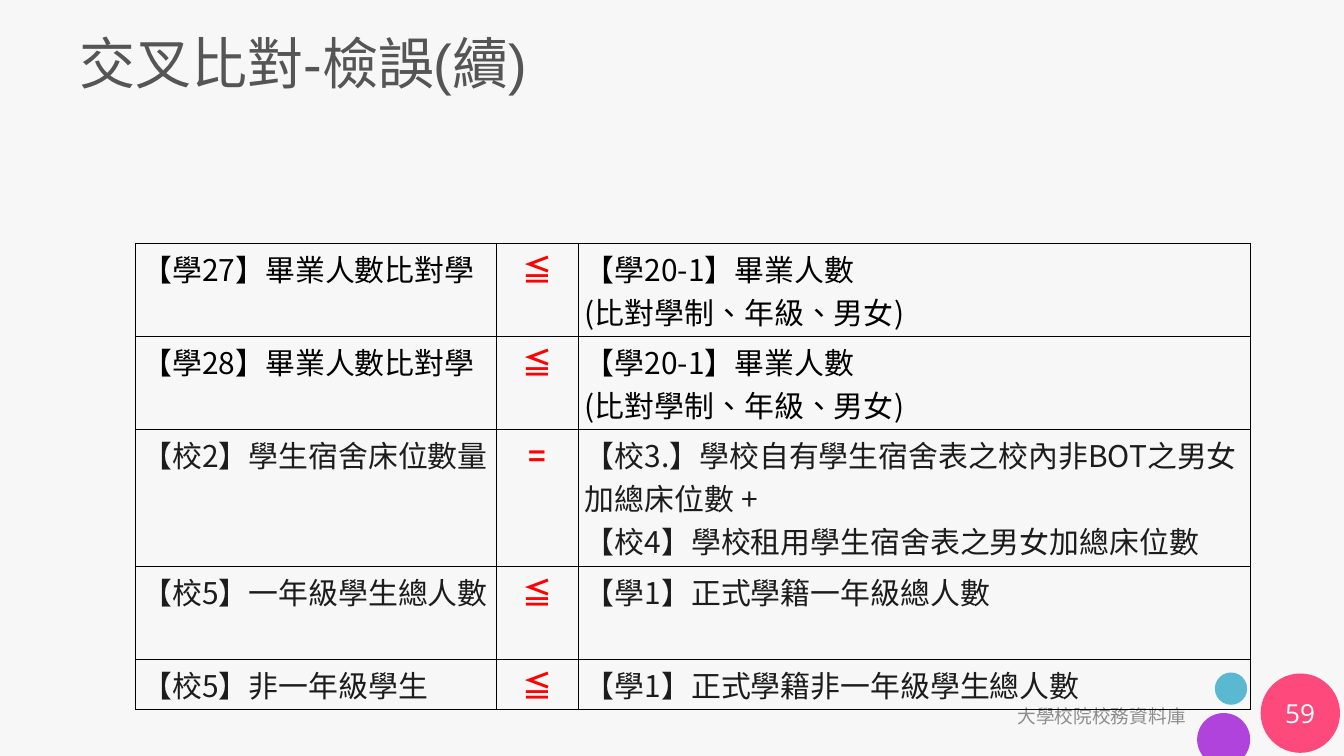
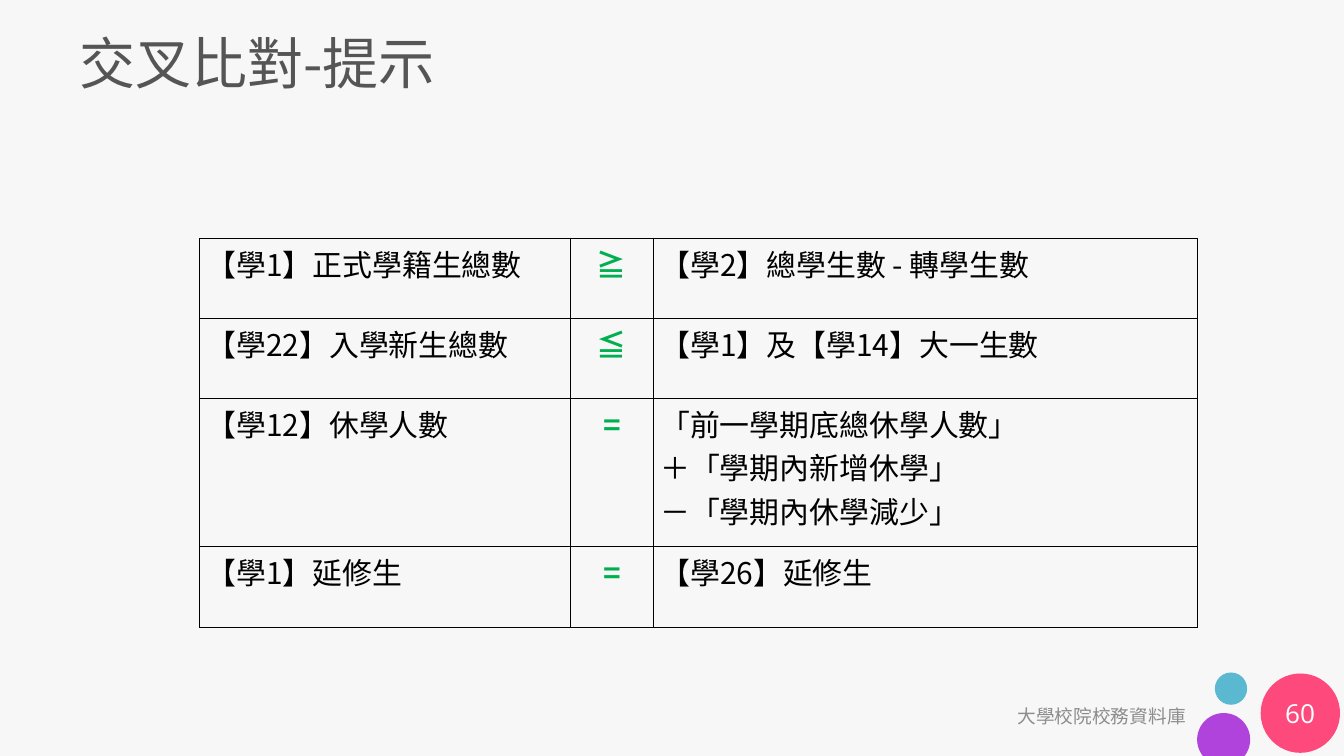
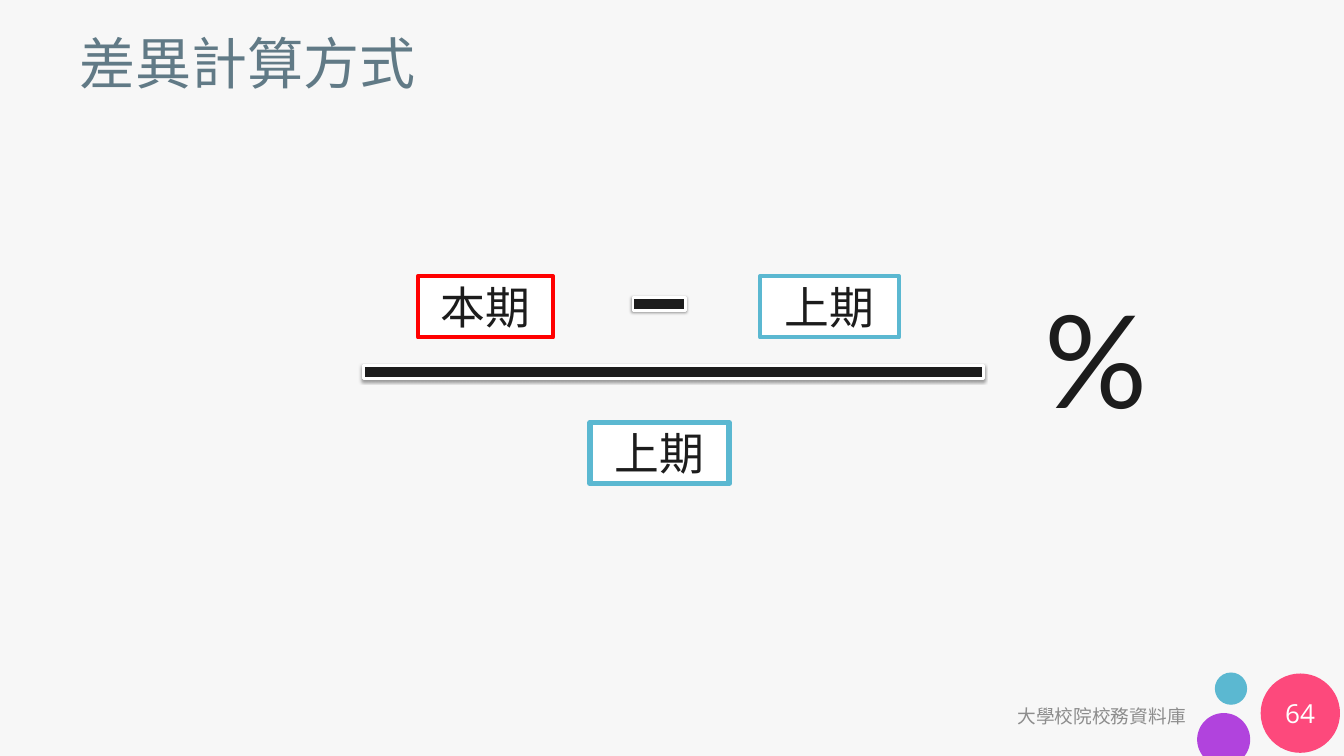
import math

import lxml.etree
import pptx
import pptx.util
import pptx.dml.color
import pptx.enum.shapes
import pptx.enum.text
import pptx.oxml
import pptx.oxml.ns

Pt = pptx.util.Pt
SHAPE = pptx.enum.shapes.MSO_SHAPE
ALIGN = pptx.enum.text.PP_ALIGN
MIDDLE = pptx.enum.text.MSO_ANCHOR.MIDDLE
TOP = pptx.enum.text.MSO_ANCHOR.TOP
GROW = pptx.enum.text.MSO_AUTO_SIZE.SHAPE_TO_FIT_TEXT

CJK = "Noto Sans CJK SC"
BLACK, INK, WHITE = "000000", "1C1C1C", "FFFFFF"
RED, GREEN, BLUE, PINK, PURPLE = "FF0000", "00B050", "5BB8D1", "FD497C", "B143DD"
FOOTER = "大學校院校務資料庫"
INSETS = (13, 6.5)

TABLES = [
    {
        "title": ("交叉比對-檢誤(續)", "Arial", "555555"), "page": "59", "sign": RED,
        "at": (145.4, 260.3), "cols": (386.6, 87.5, 720.3),
        "heights": (99.8, 99.8, 146.6, 99.8, 53.4),
        "rows": [
            (BLACK, "【學27】畢業人數比對學", "≦", "【學20-1】畢業人數\n(比對學制、年級、男女)"),
            (BLACK, "【學28】畢業人數比對學", "≦", "【學20-1】畢業人數\n(比對學制、年級、男女)"),
            (INK, "【校2】學生宿舍床位數量", "=",
             "【校3.】學校自有學生宿舍表之校內非BOT之男女加總床位數 +\n"
             "【校4】學校租用學生宿舍表之男女加總床位數"),
            (INK, "【校5】一年級學生總人數", "≦", "【學1】正式學籍一年級總人數"),
            (INK, "【校5】非一年級學生", "≦", "【學1】正式學籍非一年級學生總人數"),
        ],
    },
    {
        "title": ("交叉比對-提示", CJK, "555555"), "page": "60", "sign": GREEN,
        "at": (213.8, 255.2), "cols": (397.2, 89.2, 582.8),
        "heights": (85.8, 85.8, 159.2, 85.8),
        "rows": [
            (BLACK, "【學1】正式學籍生總數", "≧", "【學2】總學生數 - 轉學生數"),
            (BLACK, "【學22】入學新生總數", "≦", "【學1】及【學14】大一生數"),
            (BLACK, "【學12】休學人數", "=",
             "「前一學期底總休學人數」\n＋「學期內新增休學」\n－「學期內休學減少」"),
            (BLACK, "【學1】延修生", "=", "【學26】延修生"),
        ],
    },
]

FORMULA_TITLE = ("差異計算方式", CJK, "617A86")
FORMULA_PAGE = "64"
TERMS = [
    ("本期", (447.8, 295.9, 144.7, 65.5), RED, 4.5),
    ("上期", (814.3, 295.9, 149, 65.5), BLUE, 4.5),
    ("上期", (632.2, 452.7, 149, 65.5), BLUE, 6),
]
BARS = [(668.2, 295.9, 76.3, 59), (269.3, 369.4, 904.3, 59)]


def rgb(code):
    """Return the colour for a hex string."""
    return pptx.dml.color.RGBColor.from_string(code)


def points(values):
    """Convert numbers to lengths in points."""
    return [Pt(v) for v in values]


def write(tf, text, size, font, color, align=None, bold=False):
    """Set the text of a frame and format every run."""
    tf.text = text
    for p in tf.paragraphs:
        p.alignment = align
        for r in p.runs:
            r.font.size, r.font.name, r.font.bold = Pt(size), font, bold
            r.font.color.rgb = rgb(color)
            rPr = r.font._element
            rPr.set("lang", "zh-TW")
            lxml.etree.SubElement(rPr, pptx.oxml.ns.qn("a:ea")).set("typeface", CJK)


def frame(tf, anchor, insets=None):
    """Make a text frame wrap, with its anchor and insets."""
    tf.word_wrap = True
    tf.vertical_anchor = anchor
    if insets:
        tf.margin_left = tf.margin_right = Pt(insets[0])
        tf.margin_top = tf.margin_bottom = Pt(insets[1])


def add_text(s, box, anchor, *style, insets=None):
    """Add a text box."""
    tf = s.shapes.add_textbox(*points(box)).text_frame
    frame(tf, anchor, insets)
    write(tf, *style)
    return tf


def paint(sp, fill, line=None, width=0):
    """Give a shape a flat fill and an optional outline."""
    sp.shadow.inherit = False
    sp.fill.solid()
    sp.fill.fore_color.rgb = rgb(fill)
    if line:
        sp.line.color.rgb = rgb(line)
        sp.line.width = Pt(width)
    else:
        sp.line.fill.background()
    return sp


def add_shape(s, kind, box, *look):
    """Add a painted preset shape."""
    return paint(s.shapes.add_shape(kind, *points(box)), *look)


def add_cut_circle(s, cx, cy, radius, bottom, color):
    """Add a circle cut off flat at the bottom."""
    dip = math.asin((bottom - cy) / radius)
    start, sweep, steps = math.pi - dip, math.pi + 2 * dip, 60
    angles = [start + sweep * i / steps for i in range(steps + 1)]
    outline = [(Pt(cx + radius * math.cos(a)), Pt(cy + radius * math.sin(a))) for a in angles]
    builder = s.shapes.build_freeform(*outline[0])
    builder.add_line_segments(outline[1:])
    paint(builder.convert_to_shape(), color)


def add_slide(prs, title, page):
    """Add a slide with circles, title, footer and page number."""
    s = prs.slides.add_slide(prs.slide_layouts[5])
    add_shape(s, SHAPE.OVAL, (1301.6, 720.5, 34.6, 34.6), BLUE)
    add_shape(s, SHAPE.OVAL, (1350.7, 721.6, 85, 85), PINK)
    add_cut_circle(s, 1311.1, 792.4, 28.4, 810, PURPLE)
    sp = s.shapes.title
    sp.left, sp.top, sp.width, sp.height = points((72, 19.4, 1299.6, 95))
    frame(sp.text_frame, MIDDLE, INSETS)
    text, font, color = title
    write(sp.text_frame, text, 60, font, color, ALIGN.LEFT)
    add_text(s, (827.7, 745.2, 455.8, 43.2), MIDDLE,
             FOOTER, 20, "Arial", "8D8D8D", ALIGN.RIGHT, insets=INSETS)
    add_text(s, (1350.5, 742.6, 85, 43.2), MIDDLE,
             page, 28, "Open Sans", WHITE, ALIGN.CENTER, insets=INSETS)
    return s


def add_borders(cell):
    """Draw thin black lines around a cell."""
    tcPr = cell._tc.get_or_add_tcPr()
    for i, side in enumerate(("lnL", "lnR", "lnT", "lnB")):
        tcPr.insert(i, pptx.oxml.parse_xml(
            f'<a:{side} {pptx.oxml.ns.nsdecls("a")} w="12700"><a:solidFill>'
            f'<a:srgbClr val="{BLACK}"/></a:solidFill></a:{side}>'))


def add_comparison(s, spec):
    """Add the table that compares two sides."""
    rows, cols, heights = spec["rows"], spec["cols"], spec["heights"]
    box = points((*spec["at"], sum(cols), sum(heights)))
    table = s.shapes.add_table(len(rows), len(cols), *box).table
    table.first_row = table.horz_banding = False
    for column, width in zip(table.columns, cols):
        column.width = Pt(width)
    for i, (color, *texts) in enumerate(rows):
        table.rows[i].height = Pt(heights[i])
        for j, text in enumerate(texts):
            cell = table.cell(i, j)
            cell.fill.background()
            add_borders(cell)
            if j == 1:
                write(cell.text_frame, text, 32, CJK, spec["sign"], ALIGN.CENTER, True)
            else:
                write(cell.text_frame, text, 32, CJK, color)


def add_bar(s, box):
    """Add a minus bar with a soft shadow below it."""
    sp = add_shape(s, SHAPE.MATH_MINUS, box, INK, WHITE, 3)
    effects = sp._element.spPr.find(pptx.oxml.ns.qn("a:effectLst"))
    effects.append(pptx.oxml.parse_xml(
        f'<a:outerShdw {pptx.oxml.ns.nsdecls("a")} blurRad="{Pt(3.1)}" dist="{Pt(1.6)}" '
        f'dir="5400000" rotWithShape="0"><a:srgbClr val="{BLACK}">'
        '<a:alpha val="38000"/></a:srgbClr></a:outerShdw>'))


def add_formula(s):
    """Add the fraction and its percent sign."""
    for box in BARS:
        add_bar(s, box)
    for text, box, line, width in TERMS:
        tf = add_shape(s, SHAPE.RECTANGLE, box, WHITE, line, width).text_frame
        frame(tf, TOP)
        tf.auto_size = GROW
        write(tf, text, 48, "Open Sans", INK, ALIGN.CENTER)
    tf = add_text(s, (1111.7, 295.9, 223.9, 174.2), TOP, "%", 138, "Lato", INK)
    tf.auto_size = GROW


def main():
    """Build the three slides."""
    prs = pptx.Presentation()
    prs.slide_width, prs.slide_height = points((1440, 810))
    fill = prs.slide_master.background.fill
    fill.solid()
    fill.fore_color.rgb = rgb("F7F7F7")
    for spec in TABLES:
        add_comparison(add_slide(prs, spec["title"], spec["page"]), spec)
    add_formula(add_slide(prs, FORMULA_TITLE, FORMULA_PAGE))
    prs.save("out.pptx")


if __name__ == "__main__":
    main()
